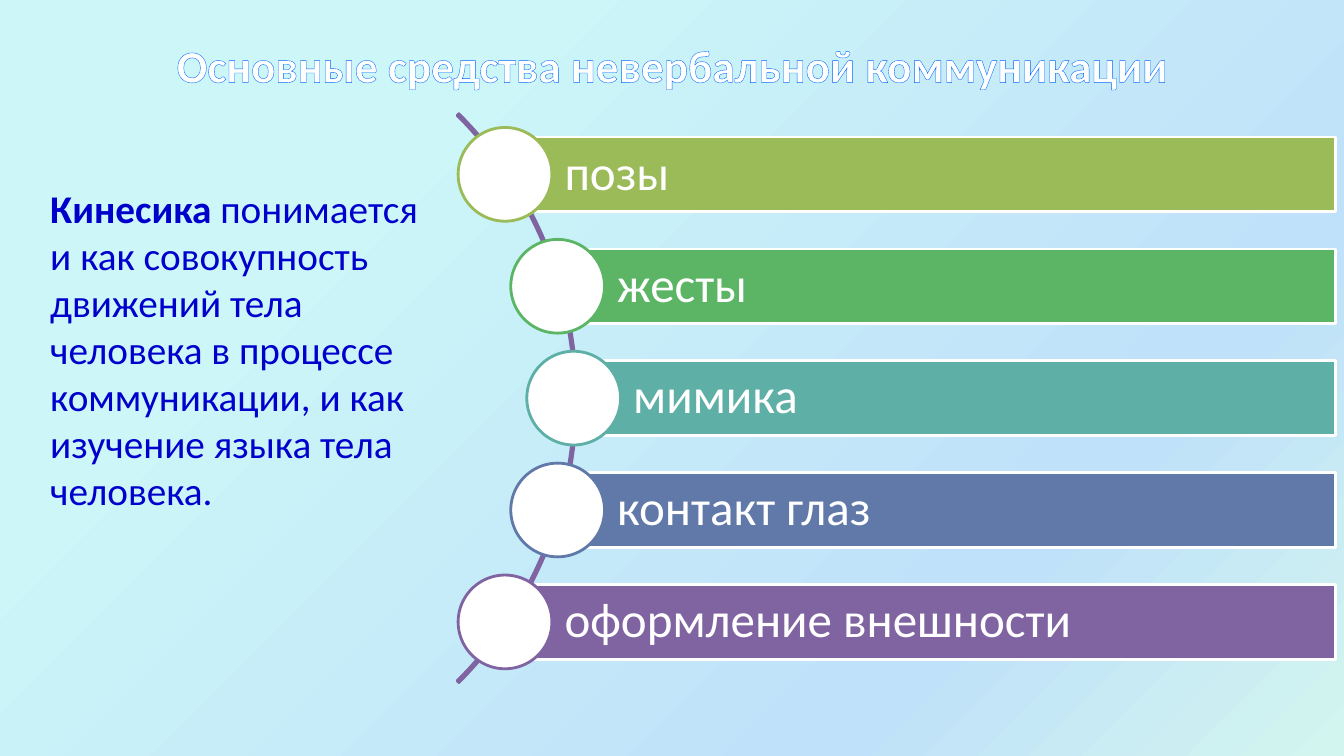
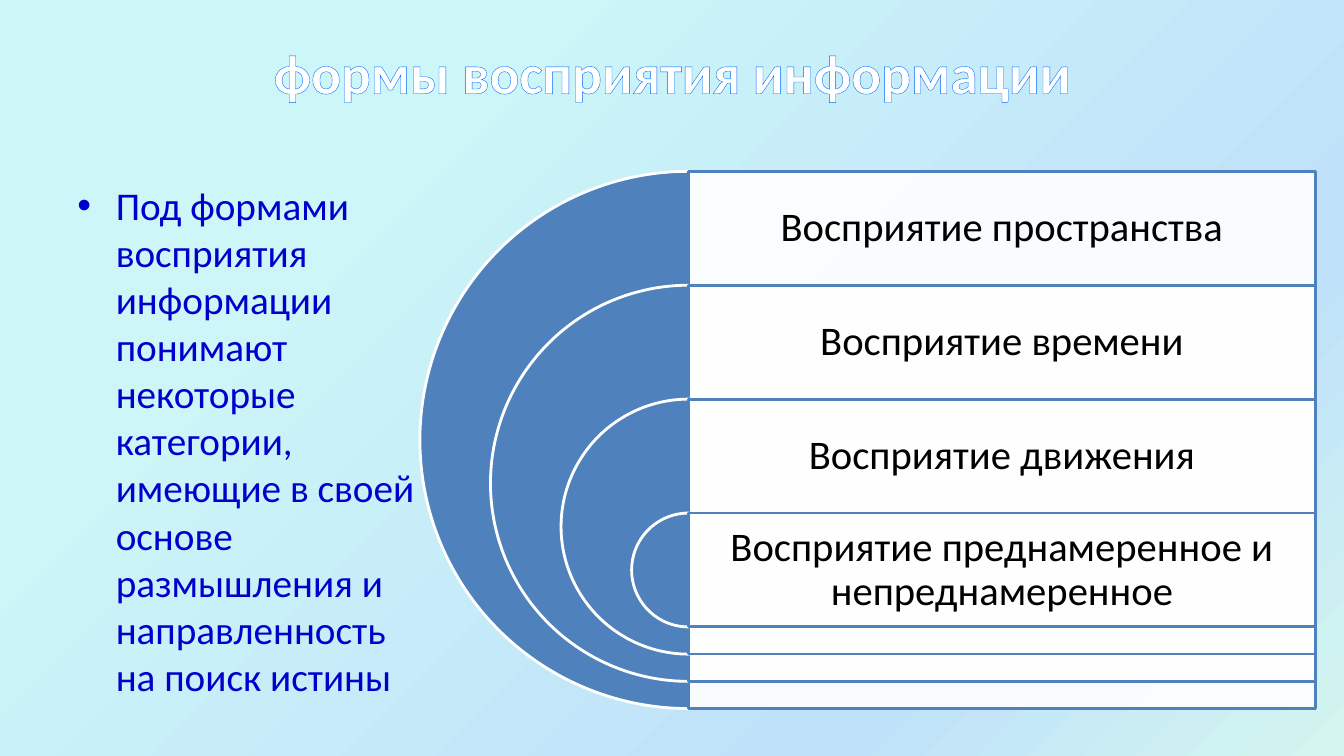
from copy import deepcopy
from dataclasses import dataclass
from math import sqrt

from lxml import etree
from pptx import Presentation
from pptx import util as u
from pptx.dml import color
from pptx.enum import shapes, text
from pptx.oxml import ns


@dataclass(frozen=True)
class Theme:
    font: str = "Calibri"
    white: str = "FFFFFF"
    black: str = "000000"
    body: str = "0000CC"
    title_outline: str = "0066FF"
    arc: str = "8064A2"
    onion: str = "4F81BD"
    means: tuple = ("9BBB59", "5CB565", "5EAFA6", "6179A8", "8064A2")
    backdrop: tuple = ((0.25, "CCF6F8"), (0.75, "BFE1F9"), (1, "D2F5EF"))
    body_size: float = 28
    bar_size: float = 35
    layer_size: float = 29
    line: float = 2
    title_line: float = 1.45


THEME = Theme()
SHAPE = shapes.MSO_SHAPE
ALIGN = text.PP_ALIGN


def rgb(value):
    return color.RGBColor.from_string(value)


def inches(*lengths):
    return [u.Inches(length) for length in lengths]


def style_font(font, size, tone, bold=False):
    font.name = THEME.font
    font.size = u.Pt(size)
    font.bold = bold
    font.color.rgb = rgb(tone)


def paint_backdrop(master):
    fill = master.background.fill
    fill.gradient()
    fill.gradient_angle = 315
    stop_list = master.element.find(".//" + ns.qn("a:gsLst"))
    stop_list.append(deepcopy(stop_list[-1]))
    for stop, (position, tone) in zip(fill.gradient_stops, THEME.backdrop):
        stop.position = position
        stop.color.rgb = rgb(tone)


def add_titled_slide(prs, heading, size, height):
    slide = prs.slides.add_slide(prs.slide_layouts[5])
    title = slide.shapes.title
    title.left, title.top, title.width, title.height = inches(0.67, 0.3, 12, height)
    frame = title.text_frame
    frame.text = heading
    frame.auto_size = text.MSO_AUTO_SIZE.NONE
    frame.vertical_anchor = text.MSO_ANCHOR.MIDDLE
    paragraph = frame.paragraphs[0]
    paragraph.alignment = ALIGN.CENTER
    run = paragraph.runs[0]
    style_font(run.font, size, THEME.white, bold=True)
    outline = etree.Element(ns.qn("a:ln"), w=str(u.Pt(THEME.title_line)))
    tone = etree.SubElement(etree.SubElement(outline, ns.qn("a:solidFill")), ns.qn("a:srgbClr"))
    tone.set("val", THEME.title_outline)
    run.font._element.insert(0, outline)
    return slide


def add_definition(slide, left, top, width, wording, term="", bullet=False):
    frame = slide.shapes.add_textbox(*inches(left, top, width, 4.95)).text_frame
    frame.word_wrap = True
    paragraph = frame.paragraphs[0]
    if bullet:
        properties = paragraph._p.get_or_add_pPr()
        indent = u.Inches(0.38)
        properties.set("marL", str(indent))
        properties.set("indent", str(-indent))
        etree.SubElement(properties, ns.qn("a:buFont"), typeface="Arial")
        etree.SubElement(properties, ns.qn("a:buChar"), char="•")
    for part, bold in ((term, True), (wording, False)):
        if part:
            run = paragraph.add_run()
            run.text = part
            style_font(run.font, THEME.body_size, THEME.body, bold)


def add_outlined(slide, kind, box, fill, line, adjustments=()):
    shape = slide.shapes.add_shape(kind, *inches(*box))
    shape.shadow.inherit = False
    for index, value in enumerate(adjustments):
        shape.adjustments[index] = value
    if fill:
        shape.fill.solid()
        shape.fill.fore_color.rgb = rgb(fill)
    else:
        shape.fill.background()
    shape.line.color.rgb = rgb(line)
    shape.line.width = u.Pt(THEME.line)
    return shape


def set_label(shape, wording, size, tone, align, insets):
    frame = shape.text_frame
    frame.text = wording
    frame.word_wrap = True
    frame.vertical_anchor = text.MSO_ANCHOR.MIDDLE
    (frame.margin_left, frame.margin_top,
     frame.margin_right, frame.margin_bottom) = inches(*insets)
    paragraph = frame.paragraphs[0]
    paragraph.alignment = align
    paragraph.line_spacing = 0.9
    style_font(paragraph.runs[0].font, size, tone)


def add_means_arc(slide, means):
    center_x, center_y, diameter, bead_radius = 1.73, 3.95, 7.98, 3.96
    pitch, bar_height, bead, right = 1.11, 0.74, 0.93, 13.25
    add_outlined(slide, SHAPE.BLOCK_ARC,
                 (center_x - diameter / 2, center_y - diameter / 2, diameter, diameter),
                 None, THEME.arc, (189, 27, 0.003))
    for index, (name, tone) in enumerate(zip(means, THEME.means)):
        drop = (index - (len(means) - 1) / 2) * pitch
        x = center_x + sqrt(bead_radius ** 2 - drop ** 2)
        y = center_y + drop
        bar = add_outlined(slide, SHAPE.RECTANGLE,
                           (x, y - bar_height / 2, right - x, bar_height), tone, THEME.white)
        set_label(bar, name, THEME.bar_size, THEME.white, ALIGN.LEFT, (0.59, 0.1, 0.1, 0.1))
        add_outlined(slide, SHAPE.OVAL, (x - bead / 2, y - bead / 2, bead, bead),
                     THEME.white, tone)


def add_onion(slide, layers):
    axis, top, width, outer, shrink, row, inset = 6.83, 1.7, 6.22, 5.33, 1.4, 1.13, 0.12
    for index, name in enumerate(layers):
        size = outer - index * shrink
        y = top + index * row
        add_outlined(slide, SHAPE.PIE, (axis - size / 2, y, size, size),
                     THEME.onion, THEME.white, (54, 162))
        panel = add_outlined(slide, SHAPE.RECTANGLE, (axis, y, width, size),
                             THEME.white, THEME.onion)
        tone = panel.fill._xPr.find(".//" + ns.qn("a:srgbClr"))
        etree.SubElement(tone, ns.qn("a:alpha"), val="90000")
        set_label(panel, name, THEME.layer_size, THEME.black, ALIGN.CENTER,
                  (inset, inset, inset, size - row + inset))


def main():
    prs = Presentation()
    prs.slide_width, prs.slide_height = inches(13.33, 7.5)
    paint_backdrop(prs.slide_master)

    kinesics = add_titled_slide(prs, "Основные средства невербальной коммуникации", 32.4, 0.68)
    add_definition(kinesics, 0.4, 1.78, 4.04,
                   " понимается и как совокупность движений тела человека в процессе "
                   "коммуникации, и как изучение языка тела человека.", term="Кинесика")
    add_means_arc(kinesics, ("позы", "жесты", "мимика", "контакт глаз", "оформление внешности"))

    perception = add_titled_slide(prs, "формы восприятия информации", 39.6, 0.82)
    add_definition(perception, 0.67, 1.75, 3.69,
                   "Под формами восприятия информации понимают некоторые категории, имеющие "
                   "в своей основе размышления и направленность на поиск истины", bullet=True)
    add_onion(perception, ("Восприятие пространства", "Восприятие времени",
                           "Восприятие движения",
                           "Восприятие преднамеренное и непреднамеренное"))
    prs.save("out.pptx")


if __name__ == "__main__":
    main()
